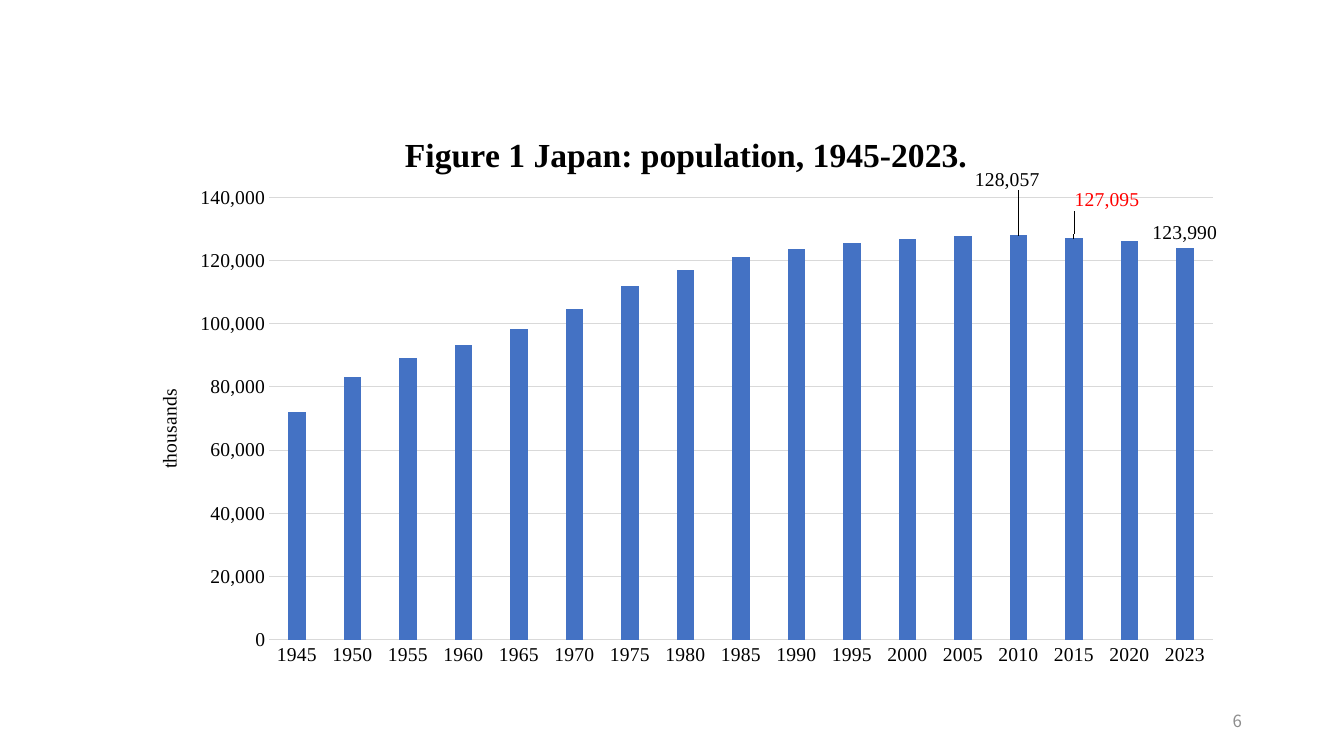
import lxml.etree
import pptx
import pptx.chart.data
import pptx.dml.color
import pptx.enum.chart
import pptx.enum.text
import pptx.oxml
import pptx.oxml.ns
import pptx.util

Cm, Pt = pptx.util.Cm, pptx.util.Pt
qn = pptx.oxml.ns.qn
COLOURS = {"bar": "4472C4", "grid": "D9D9D9", "text": "000000",
           "peak": "FF0000", "number": "8C8C8C"}
SERIF = "Times New Roman"
POPULATION = {
    1945: 72147, 1950: 83200, 1955: 89276, 1960: 93419, 1965: 98275,
    1970: 104665, 1975: 111940, 1980: 117060, 1985: 121049, 1990: 123611,
    1995: 125570, 2000: 126926, 2005: 127768, 2010: 128057, 2015: 127095,
    2020: 126146, 2023: 123990,
}
# year: (colour, shift right, shift down), shifts as shares of the chart
LABELS = {2010: ("text", -0.01, -0.07), 2015: ("peak", 0.03, -0.04),
          2023: ("text", 0, 0)}


def style(font, size, colour, name=SERIF, bold=False):
    font.size, font.name, font.bold = Pt(size), name, bold
    font.color.rgb = pptx.dml.color.RGBColor.from_string(COLOURS[colour])


def place(element, index, **settings):
    """Give a chart part a manual layout, inserted as child number index."""
    for old in element.findall(qn("c:layout")):
        element.remove(old)
    layout = lxml.etree.Element(qn("c:layout"))
    manual = lxml.etree.SubElement(layout, qn("c:manualLayout"))
    for tag, value in settings.items():
        lxml.etree.SubElement(manual, qn("c:" + tag)).set("val", str(value))
    element.insert(index, layout)


deck = pptx.Presentation()
deck.slide_width, deck.slide_height = Cm(33.87), Cm(19.05)
page = deck.slides.add_slide(deck.slide_layouts[6])

# Chart
data = pptx.chart.data.CategoryChartData(number_format="#,##0")
data.categories = [str(year) for year in POPULATION]
data.add_series("Series 1", POPULATION.values())
chart = page.shapes.add_chart(
    pptx.enum.chart.XL_CHART_TYPE.COLUMN_CLUSTERED,
    Cm(3.18), Cm(2.52), Cm(27.94), Cm(14.53), data).chart
chart.has_legend = False
style(chart.font, 14, "text")
plot = chart.plots[0]
plot.gap_width, plot.overlap, plot.vary_by_categories = 219, -27, False
place(chart._chartSpace.chart.plotArea, 0, layoutTarget="inner",
      xMode="edge", yMode="edge", x=0.129, y=0.169, w=0.851, h=0.767)

# Axes
years, thousands = chart.category_axis, chart.value_axis
for axis in (years, thousands):
    axis.major_tick_mark = axis.minor_tick_mark = pptx.enum.chart.XL_TICK_MARK.NONE
    style(axis.tick_labels.font, 14, "text")
thousands.minimum_scale, thousands.maximum_scale = 0, 140000
thousands.major_unit = 20000
thousands.tick_labels.number_format = "#,##0"
thousands.tick_labels.number_format_is_linked = False
thousands.format.line.fill.background()
for line in (years.format.line, thousands.major_gridlines.format.line):
    line.width = Pt(0.75)
    line.color.rgb = pptx.dml.color.RGBColor.from_string(COLOURS["grid"])

# Titles
for owner, text, size, bold, left, top in (
        (chart, "Figure 1 Japan: population, 1945-2023.", 24, True, 0.246, 0.047),
        (thousands, "thousands", 14, False, 0.024, 0.495)):
    title = owner.chart_title if owner is chart else owner.axis_title
    title.text_frame.text = text
    style(title.text_frame.paragraphs[0].font, size, "text", bold=bold)
    place(title._element, 1, xMode="edge", yMode="edge", x=left, y=top)

# Bars and their labels
series = plot.series[0]
series.format.fill.solid()
series.format.fill.fore_color.rgb = pptx.dml.color.RGBColor.from_string(COLOURS["bar"])
series.data_labels.show_value = False
for year, (colour, right, down) in LABELS.items():
    label = series.points[list(POPULATION).index(year)].data_label
    style(label.font, 14, colour)
    label.position = pptx.enum.chart.XL_LABEL_POSITION.OUTSIDE_END
    if right or down:
        place(label._dLbl, 1, x=right, y=down)
series.data_labels._element.append(pptx.oxml.parse_xml(
    '<c:extLst xmlns:c="http://schemas.openxmlformats.org/drawingml/2006/chart">'
    '<c:ext uri="{CE6537A1-D6FC-4f65-9D91-7224C49458BB}" '
    'xmlns:c15="http://schemas.microsoft.com/office/drawing/2012/chart">'
    '<c15:showLeaderLines val="1"/></c:ext></c:extLst>'))

# Page number
box = page.shapes.add_textbox(Cm(23.93), Cm(17.65), Cm(7.62), Cm(1.02))
box.text_frame.word_wrap = True
box.text_frame.vertical_anchor = pptx.enum.text.MSO_ANCHOR.MIDDLE
para = box.text_frame.paragraphs[0]
para.text = "6"
para.alignment = pptx.enum.text.PP_ALIGN.RIGHT
style(para.font, 12, "number", "Noto Sans CJK JP")

deck.save("out.pptx")
